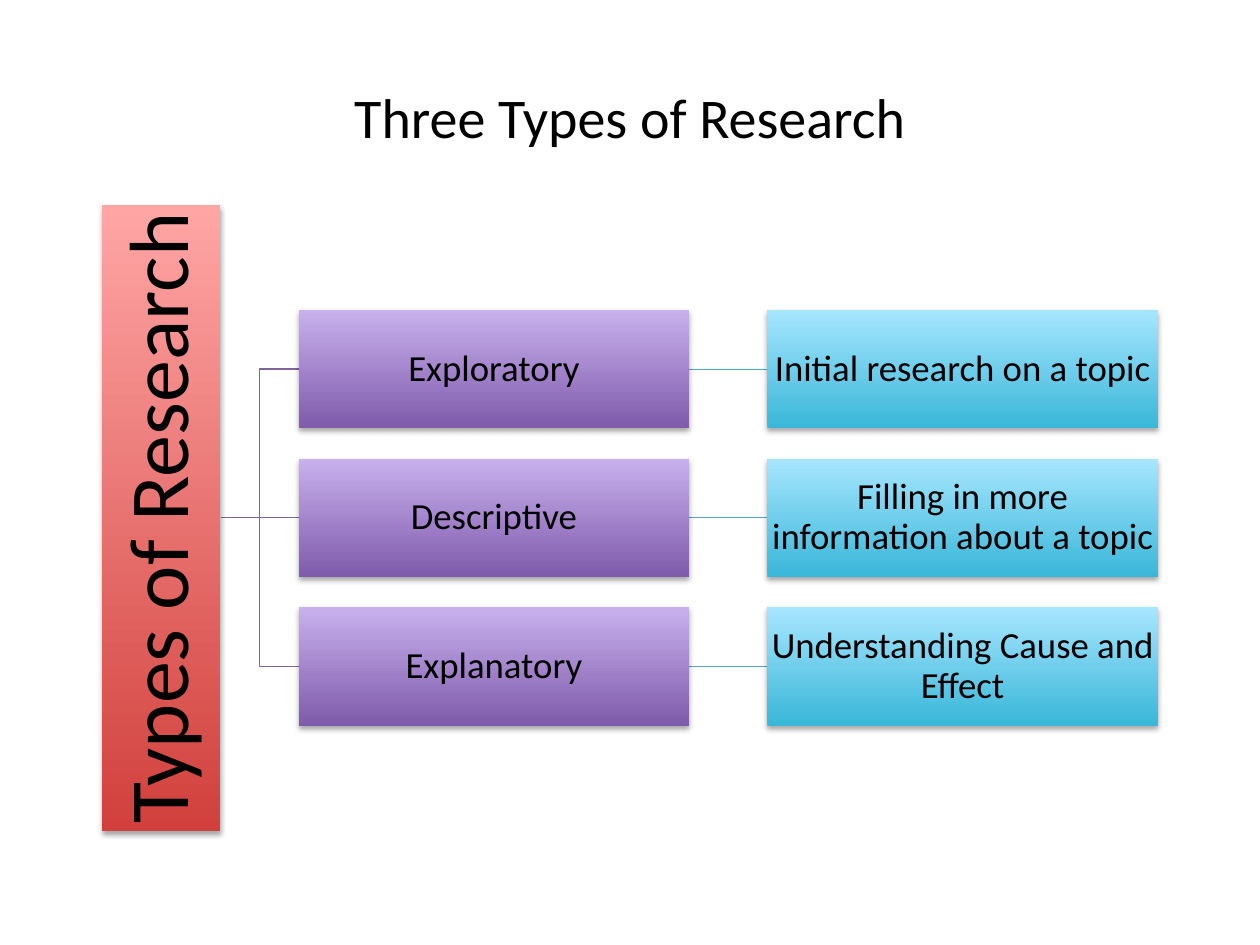
from dataclasses import dataclass

from lxml import etree
from pptx import Presentation
from pptx.dml.color import RGBColor
from pptx.enum import shapes, text
from pptx.oxml import ns, parse_xml
from pptx.util import Inches, Pt


@dataclass(frozen=True)
class Theme:
    font: str = "Calibri"
    ink: str = "000000"
    root: tuple = ("D1403C", "FFA6A5")
    kind: tuple = ("7F5BAB", "C8B0ED")
    meaning: tuple = ("39B7D8", "A7E6FF")
    branch_line: str = "8064A2"
    meaning_line: str = "4BACC6"
    title_size: int = 32
    root_size: int = 48
    box_size: int = 21
    line_width: float = 0.75


THEME = Theme()

RESEARCH_TYPES = [
    ("Exploratory", "Initial research on a topic"),
    ("Descriptive", "Filling in more information about a topic"),
    ("Explanatory", "Understanding Cause and Effect"),
]

BOX_W, BOX_H = 3.1, 0.94
ROOT_LENGTH = 4.97
ROOT_LEFT = 0.81
GAP = 0.62
MIDDLE = 4.11
ROW_STEP = 1.18
ROOT_RIGHT = ROOT_LEFT + BOX_H
KIND_LEFT = ROOT_RIGHT + GAP
KIND_RIGHT = KIND_LEFT + BOX_W
MEANING_LEFT = KIND_RIGHT + GAP

SHADOW = (
    f'<a:effectLst {ns.nsdecls("a")}>'
    '<a:outerShdw blurRad="40000" dist="23000" dir="5400000" rotWithShape="0">'
    '<a:srgbClr val="000000"><a:alpha val="35000"/></a:srgbClr>'
    "</a:outerShdw></a:effectLst>"
)


def write(frame, words, size):
    frame.text = words
    frame.word_wrap = True
    frame.vertical_anchor = text.MSO_ANCHOR.MIDDLE
    paragraph = frame.paragraphs[0]
    paragraph.alignment = text.PP_ALIGN.CENTER
    font = paragraph.runs[0].font
    font.name = THEME.font
    font.size = Pt(size)
    font.color.rgb = RGBColor.from_string(THEME.ink)
    return paragraph


def add_title(slide, words):
    title = slide.shapes.title
    title.left, title.top = Inches(0.5), Inches(0.3)
    title.width, title.height = Inches(9), Inches(1.25)
    write(title.text_frame, words, THEME.title_size)


def add_link(slide, start, end, color):
    bent = start[1] != end[1]
    kind = shapes.MSO_CONNECTOR.ELBOW if bent else shapes.MSO_CONNECTOR.STRAIGHT
    link = slide.shapes.add_connector(kind, *map(Inches, start + end))
    link.line.color.rgb = RGBColor.from_string(color)
    link.line.width = Pt(THEME.line_width)
    etree.SubElement(link.element.spPr, ns.qn("a:effectLst"))


def add_box(slide, words, center, colors, width=BOX_W, size=THEME.box_size,
            inset=0.01, rotation=0):
    x, y = center
    box = slide.shapes.add_shape(
        shapes.MSO_SHAPE.RECTANGLE, Inches(x - width / 2),
        Inches(y - BOX_H / 2), Inches(width), Inches(BOX_H))
    box.rotation = rotation
    box.line.fill.background()
    box.fill.gradient()
    box.fill.gradient_angle = 90
    for stop, color, position in zip(box.fill.gradient_stops, colors, (0, 1)):
        stop.color.rgb = RGBColor.from_string(color)
        stop.position = position
    properties = box.element.spPr
    properties.find(ns.qn("a:gradFill")).set("rotWithShape", "0")
    properties.append(parse_xml(SHADOW))
    frame = box.text_frame
    frame.margin_left = frame.margin_right = Inches(inset)
    frame.margin_top = frame.margin_bottom = Inches(inset)
    write(frame, words, size).line_spacing = 0.9


def main():
    deck = Presentation()
    deck.slide_width, deck.slide_height = Inches(10), Inches(7.5)
    slide = deck.slides.add_slide(deck.slide_layouts[5])
    add_title(slide, "Three Types of Research")

    rows = [(MIDDLE + (i - 1) * ROW_STEP, *words)
            for i, words in enumerate(RESEARCH_TYPES)]
    for y, _, _ in rows:
        add_link(slide, (ROOT_RIGHT, MIDDLE), (KIND_LEFT, y), THEME.branch_line)
        add_link(slide, (KIND_RIGHT, y), (MEANING_LEFT, y), THEME.meaning_line)

    add_box(slide, "Types of Research", (ROOT_LEFT + BOX_H / 2, MIDDLE),
            THEME.root, ROOT_LENGTH, THEME.root_size, 0.03, 270)
    for y, kind, meaning in rows:
        add_box(slide, kind, (KIND_LEFT + BOX_W / 2, y), THEME.kind)
        add_box(slide, meaning, (MEANING_LEFT + BOX_W / 2, y), THEME.meaning)

    deck.save("out.pptx")


if __name__ == "__main__":
    main()
